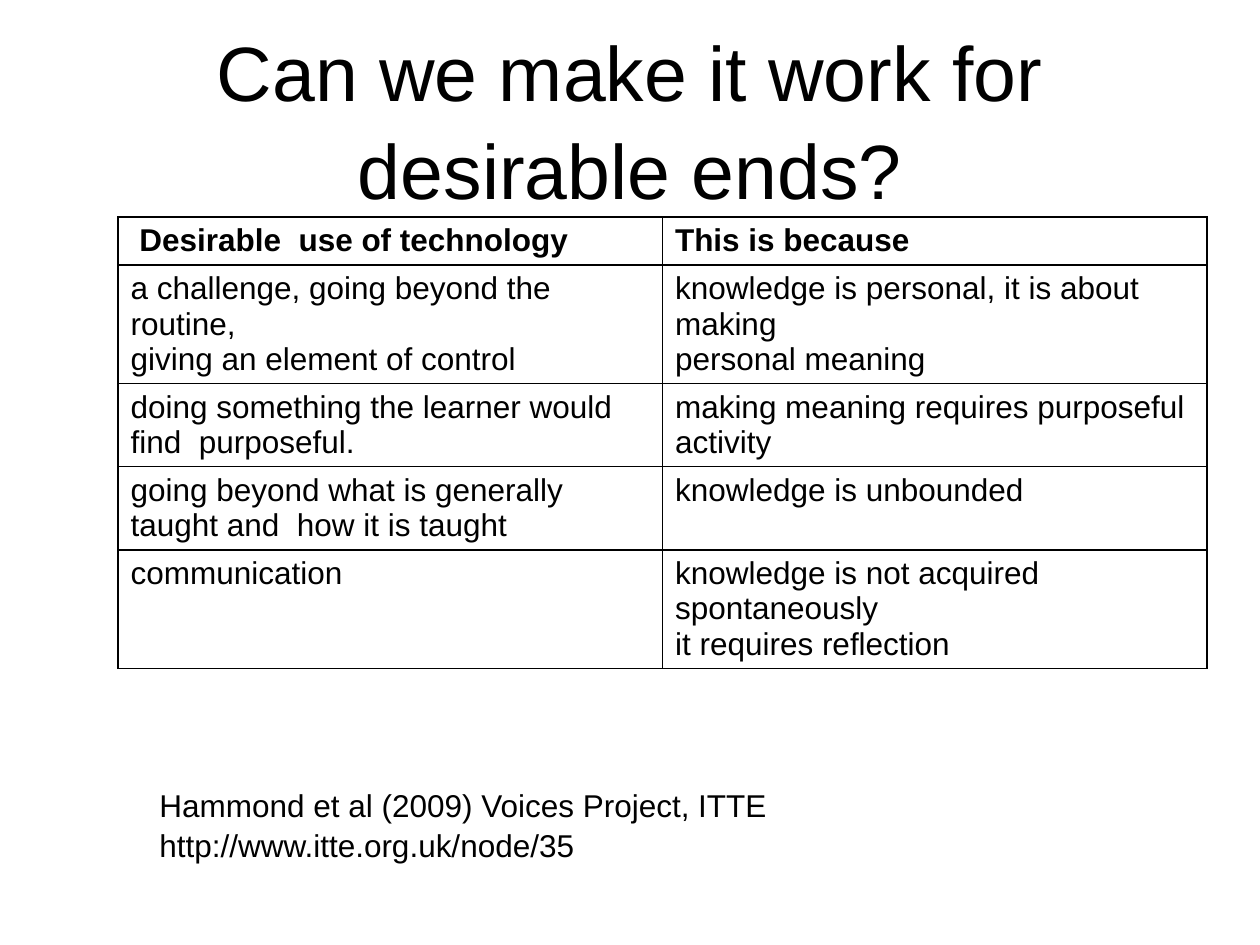
from dataclasses import dataclass

from lxml import etree
from pptx import Presentation
from pptx import util as u
from pptx.dml.color import RGBColor
from pptx.enum import text
from pptx.oxml import ns


@dataclass(frozen=True)
class Theme:
    """Colours, font and type sizes of the slide."""
    font: str = "Arial"
    ink: str = "000000"
    heading: int = 44
    body: int = 18
    rule: int = 1
    leading: float = 1.07


THEME = Theme()
QUESTION = "Can we make it work for desirable ends?"
CITATION = "Hammond et al (2009) Voices Project, ITTE http://www.itte.org.uk/node/35"
REASONS = [
    (48, " Desirable  use of technology", "This is because"),
    (118, "a challenge, going beyond the routine,\ngiving an element of control",
     "knowledge is personal, it is about making\npersonal meaning"),
    (83, "doing something the learner would find  purposeful.",
     "making meaning requires purposeful\nactivity"),
    (83, "going beyond what is generally taught and  how it is taught",
     "knowledge is unbounded"),
    (118, "communication",
     "knowledge is not acquired spontaneously\nit requires reflection"),
]


def px(length):
    """Turn pixels into EMU."""
    return u.Emu(round(length * u.Inches(1) / 126))


def style(frame, size, bold=False, align=text.PP_ALIGN.LEFT, leading=None):
    """Format every paragraph of a text frame."""
    for paragraph in frame.paragraphs:
        paragraph.alignment = align
        paragraph.line_spacing = leading
        font = paragraph.font
        font.name, font.size, font.bold = THEME.font, u.Pt(size), bold
        font.color.rgb = RGBColor.from_string(THEME.ink)


def outline(cell):
    """Rule all four sides of a table cell and clear its fill."""
    properties = cell._tc.get_or_add_tcPr()
    for side in ("lnL", "lnR", "lnT", "lnB"):
        line = etree.SubElement(properties, ns.qn(f"a:{side}"), w=str(u.Pt(THEME.rule)))
        fill = etree.SubElement(line, ns.qn("a:solidFill"))
        etree.SubElement(fill, ns.qn("a:srgbClr"), val=THEME.ink)
    cell.fill.background()


def place_title(slide, left, top, width, height):
    """Set the question in the title placeholder."""
    title = slide.shapes.title
    title.left, title.top, title.width, title.height = map(px, (left, top, width, height))
    frame = title.text_frame
    frame.text = QUESTION
    frame.auto_size = text.MSO_AUTO_SIZE.NONE
    frame.vertical_anchor = text.MSO_ANCHOR.MIDDLE
    style(frame, THEME.heading, align=text.PP_ALIGN.CENTER, leading=THEME.leading)


def place_reasons(slide, left, top, width):
    """Lay out the table of uses and reasons in two equal columns."""
    height = sum(row[0] for row in REASONS)
    table = slide.shapes.add_table(
        len(REASONS), 2, *map(px, (left, top, width, height))).table
    table.horz_banding = False
    for index, (row_height, *entries) in enumerate(REASONS):
        table.rows[index].height = px(row_height)
        for cell, entry in zip(table.rows[index].cells, entries):
            cell.text = entry
            style(cell.text_frame, THEME.body, bold=index == 0)
            outline(cell)


def place_citation(slide, left, top, width, height):
    """Write the citation below the table."""
    frame = slide.shapes.add_textbox(*map(px, (left, top, width, height))).text_frame
    frame.word_wrap = True
    frame.auto_size = text.MSO_AUTO_SIZE.SHAPE_TO_FIT_TEXT
    frame.text = CITATION
    style(frame, THEME.body, leading=THEME.leading)


def main():
    """Build and save the slide."""
    deck = Presentation()
    deck.slide_width, deck.slide_height = px(1260), px(945)
    slide = deck.slides.add_slide(deck.slide_layouts.get_by_name("Title Only"))
    place_title(slide, 63, 38, 1134, 157)
    place_reasons(slide, 118, 217, 1089)
    place_citation(slide, 147, 777, 935, 89)
    deck.save("out.pptx")


if __name__ == "__main__":
    main()
